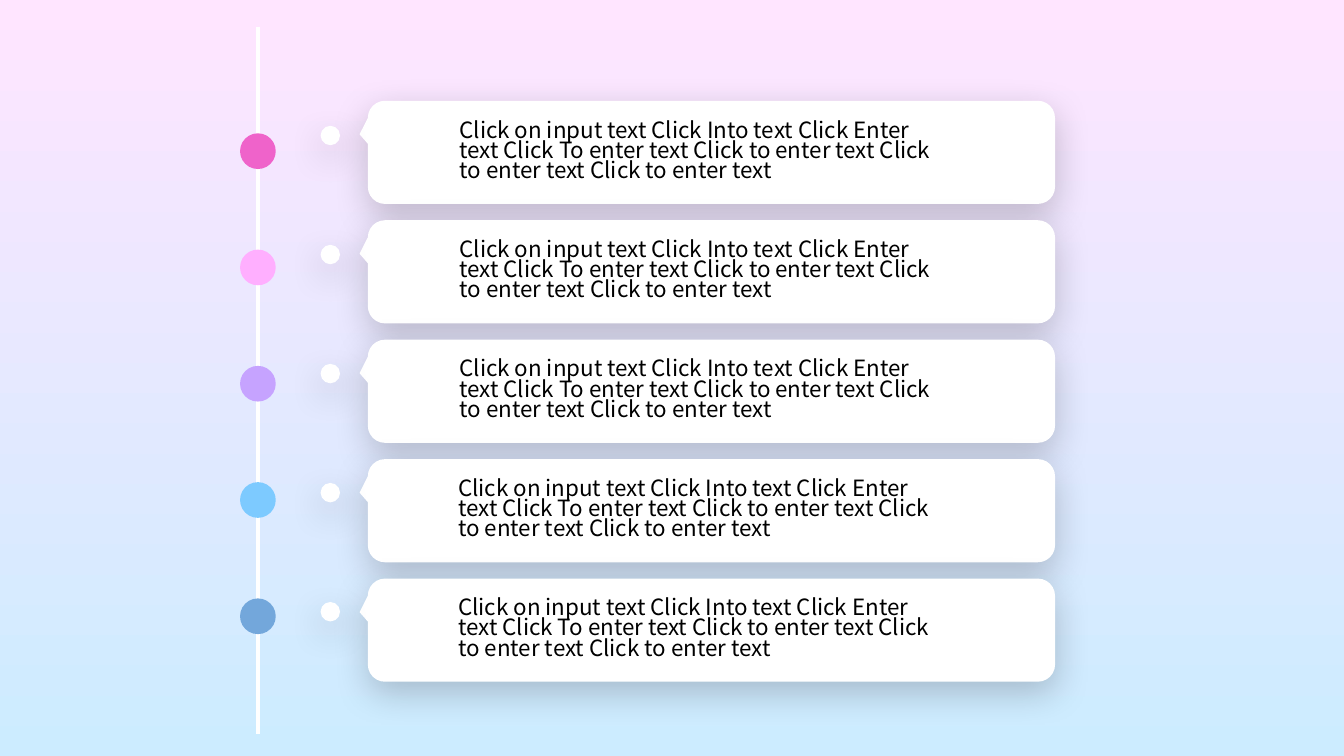
"""Build a vertical five-step timeline with speech callouts."""
from dataclasses import dataclass

from lxml import etree
from pptx import Presentation
from pptx.dml.color import RGBColor
from pptx.enum.shapes import MSO_CONNECTOR, MSO_SHAPE
from pptx.enum.text import MSO_ANCHOR
from pptx.oxml import parse_xml
from pptx.oxml.ns import nsdecls, qn
from pptx.util import Cm, Pt

STRAIGHT = MSO_CONNECTOR.STRAIGHT
OVAL = MSO_SHAPE.OVAL
CALLOUT = MSO_SHAPE.ROUNDED_RECTANGULAR_CALLOUT
MIDDLE = MSO_ANCHOR.MIDDLE


@dataclass(frozen=True)
class Theme:
    font: str = "Noto Sans CJK SC"
    body_size: int = 16
    ink: str = "000000"
    white: str = "FFFFFF"
    sky: tuple = ("FFE5FF", "CCECFF")
    steps: tuple = ("EF63CA", "FFAFFF", "C6A3FF", "7DCAFF", "73A7DB")


THEME = Theme()
STEP_TEXT = ("Click on input text Click Into text Click Enter text "
             "Click To enter text Click to enter text "
             "Click to enter text Click to enter text")

deck = Presentation()
deck.slide_width, deck.slide_height = Cm(33.87), Cm(19.05)
page = deck.slides.add_slide(deck.slide_layouts[6])

sky = page.background.fill
sky.gradient()
sky.gradient_angle = 270
for stop, position, color in zip(sky.gradient_stops, (0, 1), THEME.sky):
    stop.position = position
    stop.color.rgb = RGBColor.from_string(color)


def add_plain_shape(kind, left, top, width, height, color, shadow=False):
    shape = page.shapes.add_shape(kind, Cm(left), Cm(top), Cm(width), Cm(height))
    shape.fill.solid()
    shape.fill.fore_color.rgb = RGBColor.from_string(color)
    shape.line.fill.background()
    shape.shadow.inherit = False
    if shadow:
        effects = shape._element.spPr.find(qn("a:effectLst"))
        effects.append(parse_xml(
            f'<a:outerShdw {nsdecls("a")} blurRad="{Pt(25)}" dist="{Pt(8)}" '
            f'dir="5400000" algn="t" rotWithShape="0"><a:srgbClr val="{THEME.ink}">'
            '<a:alpha val="20000"/></a:srgbClr></a:outerShdw>'))
    return shape


def add_text(text, left, top, width, height, size, color, spacing):
    box = page.shapes.add_textbox(Cm(left), Cm(top), Cm(width), Cm(height))
    frame = box.text_frame
    frame.word_wrap = True
    frame.vertical_anchor = MIDDLE
    para = frame.paragraphs[0]
    para.line_spacing = spacing
    span = para.add_run()
    span.text = text
    span.font.name = THEME.font
    span.font.size = Pt(size)
    span.font.color.rgb = RGBColor.from_string(color)


axis = page.shapes.add_connector(STRAIGHT, Cm(6.5), Cm(0.67), Cm(6.5), Cm(18.5))
axis.line.color.rgb = RGBColor.from_string(THEME.white)
axis.line.width = Pt(3)
etree.SubElement(axis._element.spPr, qn("a:effectLst"))

for step, color in enumerate(THEME.steps):
    add_plain_shape(OVAL, 6.05, 3.36 + 2.93 * step, 0.9, 0.9, color)

for step in range(len(THEME.steps)):
    callout = add_plain_shape(CALLOUT, 9.27, 2.54 + 3.01 * step, 17.32, 2.6,
                              THEME.white, shadow=True)
    for index, value in enumerate((-0.512, -0.175, 0.167)):
        callout.adjustments[index] = value

for step in range(len(THEME.steps)):
    add_plain_shape(OVAL, 8.08, 3.17 + 3 * step, 0.49, 0.49, THEME.white, shadow=True)

for step in range(len(THEME.steps)):
    left = 11.33 if step < 3 else 11.3
    add_text(STEP_TEXT, left, 3.05 + 3.01 * step, 12.73, 1.57,
             size=THEME.body_size, color=THEME.ink, spacing=0.75)

deck.save("out.pptx")
